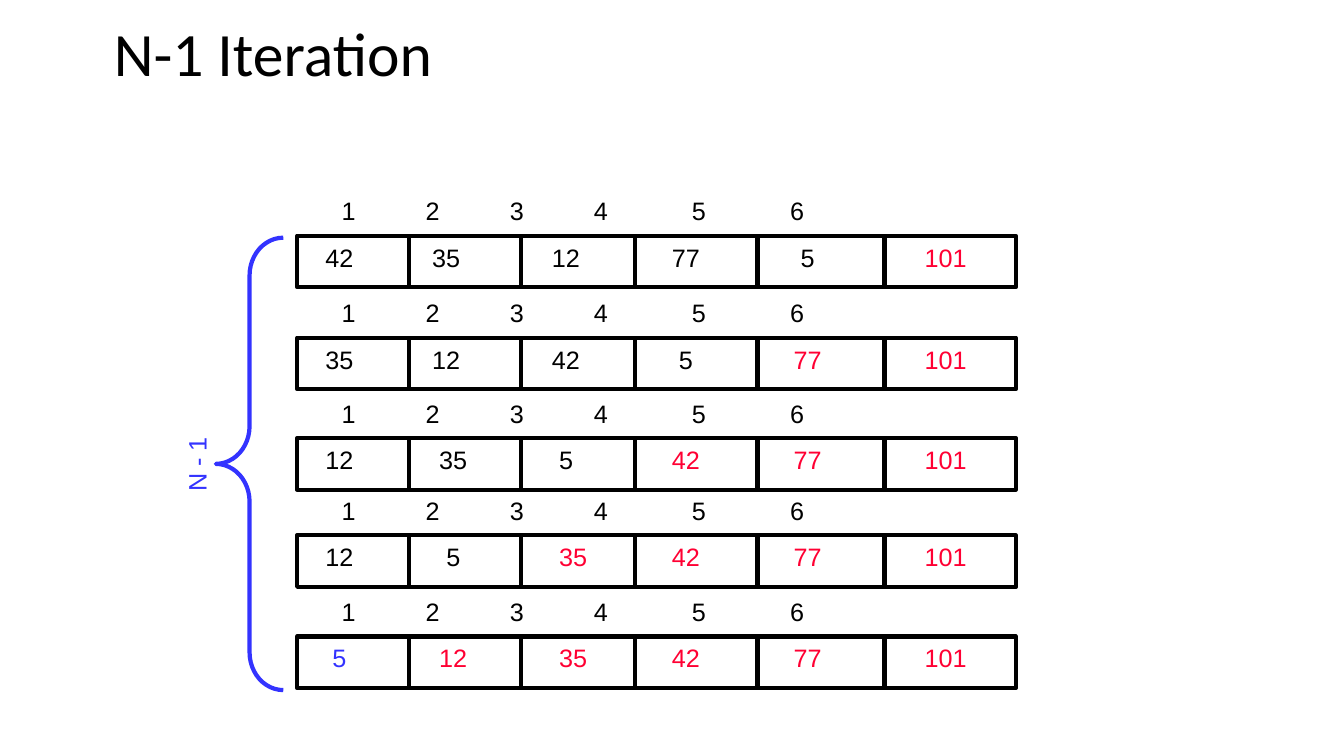
"""Build the slide showing the N-1 iterations of a bubble sort."""
from lxml import etree
from pptx import Presentation
from pptx import util as u
from pptx.dml.color import RGBColor
from pptx.enum import shapes, text
from pptx.oxml.ns import qn

BLACK, RED, BLUE = "000000", "FF0033", "3333FF"
TITLE = "N-1 Iteration"
BRACE_LABEL = "N - 1"
INDEXES = ["1", "2", "3", "4", "5", "6"]
# Each cell is (value, indent steps, colour).
LAST = ("101", 1, RED)
SORTED_77 = ("77", 1, RED)
SORTED_42 = ("42", 0, RED)
SORTED_35 = ("35", 1, RED)
ROWS = [
    (5.94, [("42", 0, BLACK), ("35", 0, BLACK), ("12", 0, BLACK),
            ("77", 0, BLACK), ("5", 2, BLACK), LAST]),
    (8.51, [("35", 0, BLACK), ("12", 0, BLACK), ("42", 0, BLACK),
            ("5", 1, BLACK), SORTED_77, LAST]),
    (11.04, [("12", 0, BLACK), ("35", 1, BLACK), ("5", 1, BLACK),
             SORTED_42, SORTED_77, LAST]),
    (13.49, [("12", 0, BLACK), ("5", 2, BLACK), SORTED_35,
             SORTED_42, SORTED_77, LAST]),
    (16.04, [("5", 1, BLUE), ("12", 1, RED), SORTED_35,
             SORTED_42, SORTED_77, LAST]),
]
ROW_LEFT, ROW_WIDTH, ROW_HEIGHT = 7.49, 18.11, 1.3
DIVIDERS = [10.3, 13.12, 16.0, 19.09, 22.29]
VALUE_LEFTS = [7.95, 10.64, 13.66, 16.68, 19.57, 22.87]
INDEX_TABS = [2.12, 4.24, 6.36, 8.83, 11.3]
INDENT, DIGIT, INSETS, TEXT_HEIGHT = 0.18, 0.36, 0.51, 1.02


def rgb(value):
    return RGBColor.from_string(value)


def add_text(slide, words, box, color=BLACK, size=18, font="Arial", wrap=False, tabs=()):
    sp = slide.shapes.add_textbox(*map(u.Cm, box))
    tf = sp.text_frame
    tf.word_wrap = wrap
    p = tf.paragraphs[0]
    p.text = words
    if tabs:
        tab_list = etree.SubElement(p._p.get_or_add_pPr(), qn("a:tabLst"))
        for pos in tabs:
            etree.SubElement(tab_list, qn("a:tab"), pos=str(u.Cm(pos)), algn="l")
    p.font.size = u.Pt(size)
    p.font.name = font
    p.font.color.rgb = rgb(color)
    return sp


def style_line(sp, color):
    sp.line.color.rgb = rgb(color)
    sp.line.width = u.Pt(3)


def add_outline(slide, kind, box, color):
    sp = slide.shapes.add_shape(kind, *map(u.Cm, box))
    sp.shadow.inherit = False
    sp.fill.background()
    style_line(sp, color)
    return sp


def add_row(slide, top, cells):
    add_outline(slide, shapes.MSO_SHAPE.RECTANGLE,
                (ROW_LEFT, top, ROW_WIDTH, ROW_HEIGHT), BLACK)
    for x in DIVIDERS:
        line = slide.shapes.add_connector(
            shapes.MSO_CONNECTOR.STRAIGHT,
            *map(u.Cm, (x, top, x, top + ROW_HEIGHT)))
        style_line(line, BLACK)
        etree.SubElement(line._element.spPr, qn("a:effectLst"))
    for left, (value, steps, color) in zip(VALUE_LEFTS, cells):
        box = (left + steps * INDENT, top + 0.03,
               INSETS + DIGIT * len(value), TEXT_HEIGHT)
        add_text(slide, value, box, color)
    add_text(slide, "\t".join(INDEXES), (8.36, top - 1.14, 12.4, TEXT_HEIGHT),
             wrap=True, tabs=INDEX_TABS)


def main():
    prs = Presentation()
    prs.slide_width, prs.slide_height = u.Cm(33.87), u.Cm(19.05)
    slide = prs.slides.add_slide(prs.slide_layouts[6])

    title = add_text(slide, TITLE, (2.62, 0.3, 21.59, 2.26),
                     size=44, font="Calibri", wrap=True)
    title.text_frame.vertical_anchor = text.MSO_ANCHOR.MIDDLE
    title.text_frame.paragraphs[0].line_spacing = 0.9

    for top, cells in ROWS:
        add_row(slide, top, cells)

    brace = add_outline(slide, shapes.MSO_SHAPE.LEFT_BRACE,
                        (5.44, 5.99, 1.7, 11.4), BLUE)
    brace.adjustments[0] = 0.56
    label = add_text(slide, BRACE_LABEL, (4.01, 11.18, 1.9, TEXT_HEIGHT), BLUE)
    label.rotation = 270

    prs.save("out.pptx")


if __name__ == "__main__":
    main()
